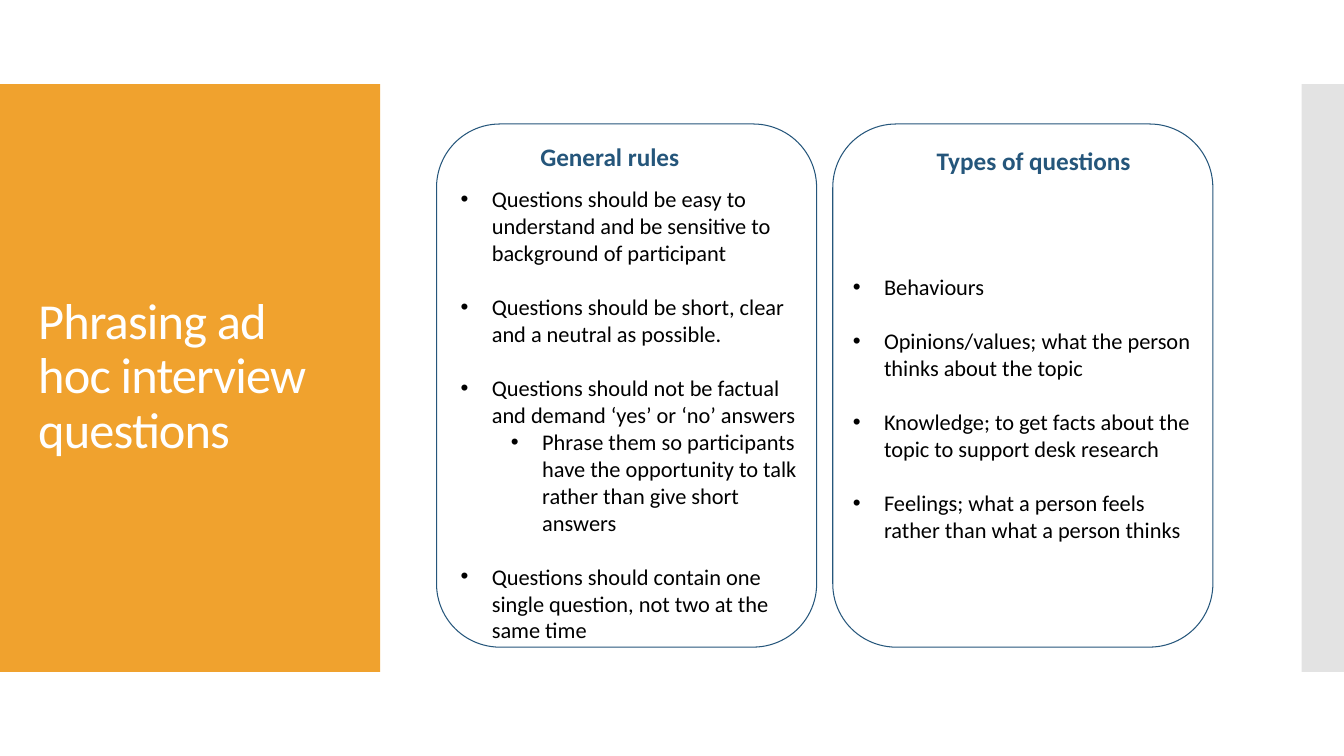
import pptx
import pptx.chart.data
import pptx.dml.color
import pptx.enum.shapes
import pptx.enum.text
import pptx.oxml
import pptx.oxml.ns
import pptx.util

TITLE = "Phrasing ad hoc interview questions"
PANELS = [
    {
        "heading": "General rules", "heading_top": 1.35,
        "body": (0.14, 1.79, 3.64, 4.68),
        "items": [
            (0, "Questions should be easy to understand and be sensitive to background of participant"),
            (0, "Questions should be short, clear and a neutral as possible."),
            (0, "Questions should not be factual and demand ‘yes’ or ‘no’ answers"),
            (1, "Phrase them so participants have the opportunity to talk rather than give short answers"),
            (0, "Questions should contain one single question, not two at the same time"),
        ],
    },
    {
        "heading": "Types of questions", "heading_top": 1.39,
        "body": (0.1, 2.66, 3.67, 3.05),
        "items": [
            (0, "Behaviours"),
            (0, "Opinions/values; what the person thinks about the topic"),
            (0, "Knowledge; to get facts about the topic to support desk research"),
            (0, "Feelings; what a person feels rather than what a person thinks"),
        ],
    },
]
ORANGE, GREY, BLUE, WHITE, BLACK = "F0A22E", "C8C8C8", "25567B", "FFFFFF", "000000"
WIDTH, HEIGHT = 13.33, 7.5
BAND_TOP, BAND_HEIGHT = HEIGHT / 9, HEIGHT * 7 / 9
TITLE_BAND, EDGE_BAND = 3.77, 0.42
PANEL_LEFT, PANEL_TOP, PANEL_WIDTH, PANEL_HEIGHT = 4.33, 1.23, 3.77, 5.19
PANEL_STEP, HEADING_INDENT = 3.93, 0.93
BULLET_INDENT, LEVEL_INDENT, BLANK_LINE = 0.31, 0.5, 19.5


def color(value):
    """Turn a hex string into a colour."""
    return pptx.dml.color.RGBColor.from_string(value)


def box(at):
    """Turn inches into slide lengths."""
    return [pptx.util.Inches(v) for v in at]


def add_box(s, kind, at, fill=None, line=None, alpha=None):
    """Add a preset shape with an optional fill, outline and opacity."""
    sp = s.shapes.add_shape(kind, *box(at))
    sp.shadow.inherit = False
    if fill:
        sp.fill.solid()
        sp.fill.fore_color.rgb = color(fill)
    else:
        sp.fill.background()
    if line:
        sp.line.color.rgb = color(line)
        sp.line.width = pptx.util.Pt(0.75)
    else:
        sp.line.fill.background()
    if alpha:
        clr = sp.fill._xPr.find(".//" + pptx.oxml.ns.qn("a:srgbClr"))
        clr.append(pptx.oxml.parse_xml(
            f'<a:alpha {pptx.oxml.ns.nsdecls("a")} val="{alpha * 1000}"/>'))


def add_text_frame(s, at, anchor=pptx.enum.text.MSO_ANCHOR.TOP):
    """Add a wrapping text box and return its frame."""
    tf = s.shapes.add_textbox(*box(at)).text_frame
    tf.word_wrap = True
    tf.vertical_anchor = anchor
    return tf


def write(p, text, size=16, fill=BLACK, bold=False, spacing=None, leading=None,
          level=None, before=0):
    """Write one paragraph; a level makes it a bullet."""
    r = p.add_run()
    r.text = text
    r.font.name, r.font.size, r.font.bold = "Calibri", pptx.util.Pt(size), bold
    r.font.color.rgb = color(fill)
    p.space_before = pptx.util.Pt(before)
    if spacing:
        r.font._element.set("spc", str(spacing))
    if leading:
        p.line_spacing = leading
    if level is not None:
        p.level = level
        pPr = p._p.get_or_add_pPr()
        pPr.set("marL", str(pptx.util.Inches(BULLET_INDENT + level * LEVEL_INDENT)))
        pPr.set("indent", str(-pptx.util.Inches(BULLET_INDENT)))
        for tag in ('buFont typeface="Arial"', 'buChar char="•"'):
            pPr.append(pptx.oxml.parse_xml(f'<a:{tag} {pptx.oxml.ns.nsdecls("a")}/>'))


def add_panel(s, left, panel):
    """Add an outlined panel with its heading and bullets."""
    add_box(s, pptx.enum.shapes.MSO_SHAPE.ROUNDED_RECTANGLE,
            (left, PANEL_TOP, PANEL_WIDTH, PANEL_HEIGHT), line=BLUE)
    tf = add_text_frame(s, (left + HEADING_INDENT, panel["heading_top"], 3.32, 0.58))
    write(tf.paragraphs[0], panel["heading"], size=18, fill=BLUE, bold=True)
    inset, *rest = panel["body"]
    tf = add_text_frame(s, (left + inset, *rest))
    for i, (level, text) in enumerate(panel["items"]):
        p = tf.add_paragraph() if i else tf.paragraphs[0]
        write(p, text, level=level, before=BLANK_LINE if i and not level else 0)


def main():
    """Build the slide and save it."""
    prs = pptx.Presentation()
    prs.slide_width, prs.slide_height = box((WIDTH, HEIGHT))
    s = prs.slides.add_slide(prs.slide_layouts[6])
    rect = pptx.enum.shapes.MSO_SHAPE.RECTANGLE
    add_box(s, rect, (0, BAND_TOP, TITLE_BAND, BAND_HEIGHT), fill=ORANGE)
    add_box(s, rect, (WIDTH - EDGE_BAND, BAND_TOP, EDGE_BAND, BAND_HEIGHT),
            fill=GREY, alpha=50)
    tf = add_text_frame(s, (0.28, 1.23, 3.22, 5.03), pptx.enum.text.MSO_ANCHOR.MIDDLE)
    write(tf.paragraphs[0], TITLE, size=36, fill=WHITE, spacing=-60, leading=0.9)
    for i, panel in enumerate(PANELS):
        add_panel(s, PANEL_LEFT + i * PANEL_STEP, panel)
    prs.save("out.pptx")


if __name__ == "__main__":
    main()
